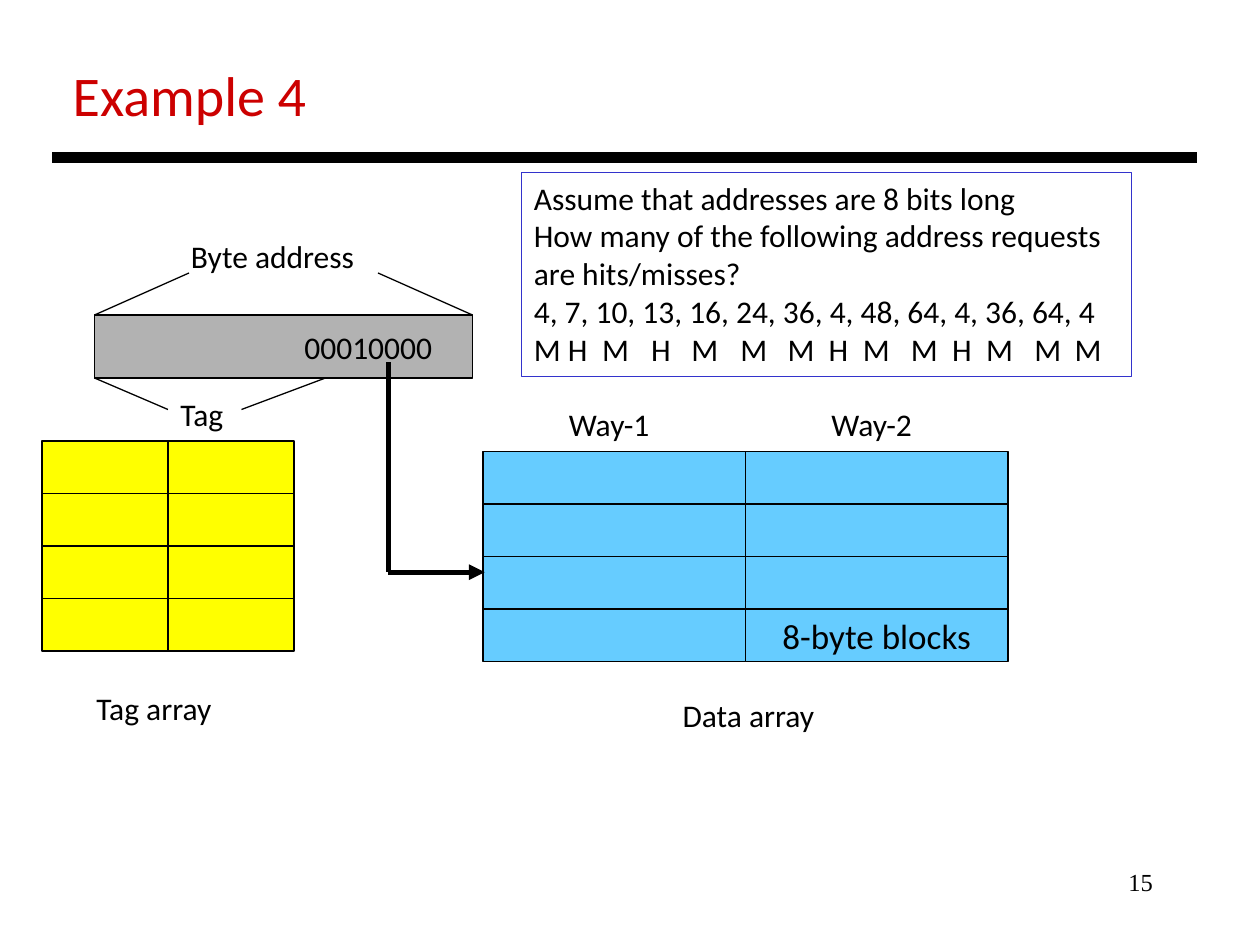
from dataclasses import dataclass
from lxml import etree
from pptx import Presentation, util as u
from pptx.dml.color import RGBColor as Rgb
from pptx.enum import shapes as sh, text as tx
from pptx.oxml import ns

Pt = u.Pt


@dataclass(frozen=True)
class Theme:
    """Colours, fonts and type sizes of the slide."""
    ink: str = "000000"
    title: str = "CC0000"
    edge: str = "3333CC"
    addr: str = "B2B2B2"
    tag: str = "FFFF00"
    data: str = "66CCFF"
    font: str = "Calibri"
    serif: str = "Times New Roman"
    head: int = 32
    block: int = 20
    body: int = 18
    foot: int = 14
    thin: float = 0.75


T = Theme()


def child(node, name, **vals):
    """Add a DrawingML child element with the given attributes."""
    return etree.SubElement(node, ns.qn("a:" + name), vals)


def write(shape, lines, size=T.body, color=T.ink, font=T.font, align="LEFT", **frame):
    """Write lines of text into a shape."""
    tf = shape.text_frame
    base = {"word_wrap": False, "vertical_anchor": tx.MSO_ANCHOR.TOP}
    for key, val in {**base, **frame}.items():
        setattr(tf, key, val)
    tf.text = "\n".join(lines)
    for par in tf.paragraphs:
        par.alignment = getattr(tx.PP_ALIGN, align)
        look = par.runs[0].font
        for key, val in {"size": Pt(size), "name": font}.items():
            setattr(look, key, val)
        look.color.rgb = Rgb.from_string(color)


def label(slide, box, line, **look):
    """Place a one-line text box."""
    shape = slide.shapes.add_textbox(*map(Pt, box))
    write(shape, [line], **look)


def rect(slide, box, fill=None, edge=T.ink):
    """Place a thin-edged rectangle, hollow when no fill is given."""
    shape = slide.shapes.add_shape(sh.MSO_SHAPE.RECTANGLE, *map(Pt, box))
    shape.shadow.inherit = False
    if fill:
        shape.fill.solid()
        shape.fill.fore_color.rgb = Rgb.from_string(fill)
    else:
        shape.fill.background()
    shape.line.color.rgb = Rgb.from_string(edge)
    shape.line.width = Pt(T.thin)
    return shape


def line(slide, start, end, width=T.thin, arrow=False):
    """Draw a straight line, with an arrowhead at its end if asked."""
    con = slide.shapes.add_connector(sh.MSO_CONNECTOR.STRAIGHT, *map(Pt, start + end))
    con.line.color.rgb = Rgb.from_string(T.ink)
    con.line.width = Pt(width)
    if arrow:
        child(con.line._ln, "tailEnd", type="triangle")
    child(con._element.spPr, "effectLst")


def grid(slide, box, fill, rows=4, cols=2):
    """Fill a box with equal cells and return the last one."""
    x, y, w, h = box
    cw, ch = w / cols, h / rows
    for c in range(cols):
        for r in range(rows):
            cell = rect(slide, (x + c * cw, y + r * ch, cw, ch), fill)
    return cell


def header(slide, box):
    """Place the title above its heavy rule."""
    x, y, w, h = box
    label(slide, (x + 4.5, y, 149, 46), "Example 4", size=T.head, color=T.title)
    line(slide, (x, y + h), (x + w, y + h), 6)


def address(slide, box):
    """Draw the address word with its fan lines and labels."""
    x, y, w, h = box
    end, base = x + w, y + h
    word = rect(slide, box, T.addr)
    write(word, ["00010000"], align="RIGHT", word_wrap=True,
          vertical_anchor=tx.MSO_ANCHOR.MIDDLE, margin_right=Pt(23))
    label(slide, (x + 48, y - 48, 109, 29), "Byte address")
    label(slide, (x + 42, base + 6, 40, 29), "Tag")
    for start, stop in (((x + 54, y - 24), (x, y)),
                        ((end - 54, y - 24), (end, y)),
                        ((x, base), (x + 42, base + 18)),
                        ((x + 84, base + 18), (x + 132, base))):
        line(slide, start, stop)


def tags(slide, box):
    """Draw the tag array with its caption."""
    x, y, w, h = box
    grid(slide, box, T.tag)
    label(slide, (x + 24, y + h + 18, 81, 29), "Tag array")


def data(slide, box):
    """Draw the data array with its way headings and caption."""
    x, y, w, h = box
    last = grid(slide, box, T.data)
    write(last, ["8-byte blocks"], size=T.block, align="CENTER",
          vertical_anchor=tx.MSO_ANCHOR.MIDDLE)
    for i in range(2):
        label(slide, (x + 42 + i * w / 2, y - 30, 61, 29), f"Way-{i + 1}")
    label(slide, (x + 107, y + h + 16, 91, 29), "Data array")


def index(slide, box):
    """Lead the index bits to their set with an elbow arrow."""
    x, y, w, h = box
    line(slide, (x, y), (x, y + h), 3)
    line(slide, (x, y + h), (x + w, y + h), 3, arrow=True)


def quiz(slide, box):
    """Frame the question, the requests and the tabbed answers."""
    panel = rect(slide, box, edge=T.edge)
    write(panel, ["Assume that addresses are 8 bits long",
                  "How many of the following address requests",
                  "are hits/misses?",
                  "4, 7, 10, 13, 16, 24, 36, 4, 48, 64, 4, 36, 64, 4",
                  "\t".join("MHMHMMMHMMHMMM")])
    row = panel.text_frame.paragraphs[-1]._p.get_or_add_pPr()
    tabs = child(row, "tabLst")
    for stop in (19.5, 39, 67, 90, 118, 145, 168.5, 188, 215.5, 239, 258.5, 286, 309):
        child(tabs, "tab", pos=str(int(Pt(stop))), algn="l")


def main():
    """Build and save the slide."""
    deck = Presentation()
    deck.slide_width, deck.slide_height = Pt(720), Pt(540)
    slide = deck.slides.add_slide(deck.slide_layouts[6])
    for draw, box in ((header, (30, 31, 654, 59)),
                      (address, (54, 180, 216, 36)),
                      (tags, (24, 252, 144, 120)),
                      (data, (276, 258, 300, 120)),
                      (index, (222, 207, 55, 120)),
                      (quiz, (298, 98.5, 348.5, 116.5))):
        draw(slide, box)
    label(slide, (516, 492, 150, 36), "15", size=T.foot, font=T.serif, align="RIGHT")
    deck.save("out.pptx")


if __name__ == "__main__":
    main()
